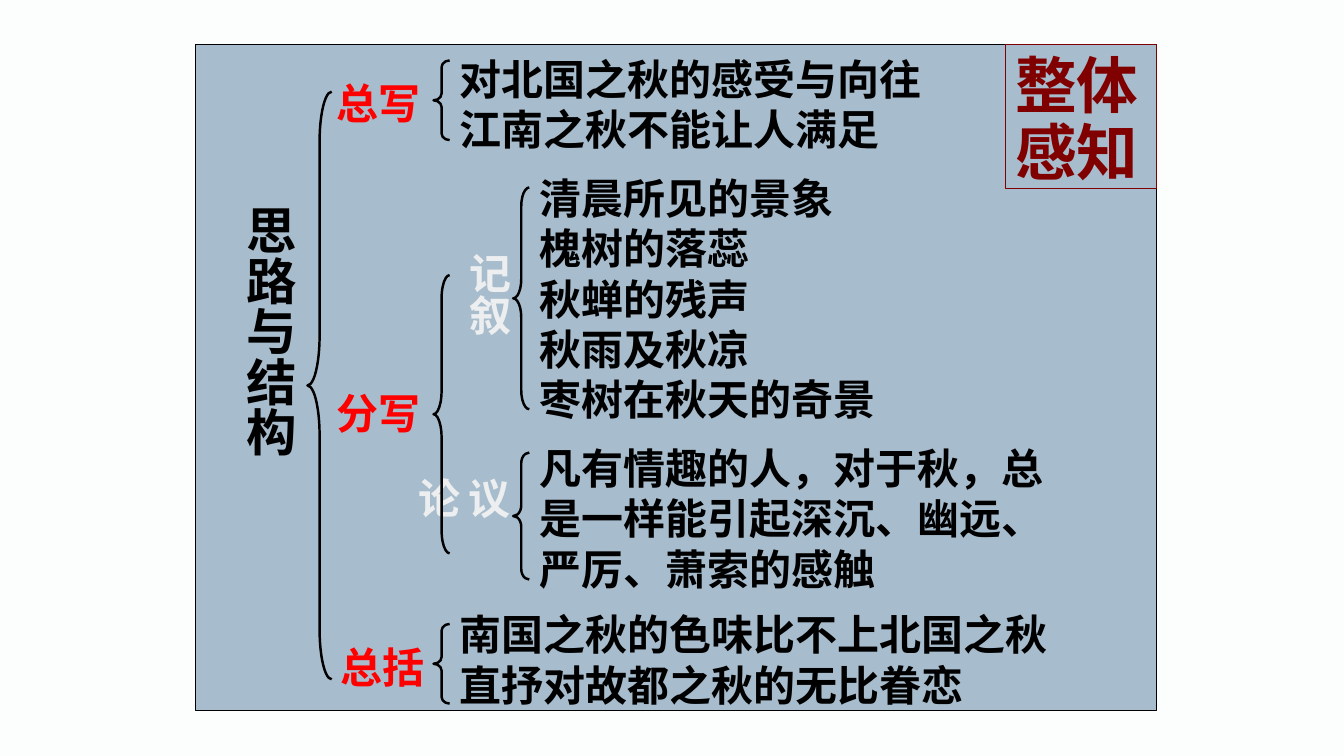
import dataclasses

import pptx
import pptx.dml.color
import pptx.enum.shapes
import pptx.enum.text
import pptx.oxml.ns
import pptx.util
from lxml import etree

Inches = pptx.util.Inches
Pt = pptx.util.Pt
Align = pptx.enum.text.PP_ALIGN


@dataclasses.dataclass(frozen=True)
class Theme:
    background: str = "FCFDFD"
    panel: str = "547D9D"
    ink: str = "000000"
    title: str = "800000"
    accent: str = "FF0000"
    pale: str = "ECEEEF"
    title_size: int = 44
    topic_size: int = 36
    text_size: int = 30
    east_asian: str = "Noto Sans CJK SC"
    sans: str = "Arial"
    serif: str = "Times New Roman"


THEME = Theme()


def colour(value):
    return pptx.dml.color.RGBColor.from_string(value)


def add_child(parent, tag, **attributes):
    return etree.SubElement(parent, pptx.oxml.ns.qn(tag), **attributes)


def place(shape, box):
    shape.left, shape.top, shape.width, shape.height = map(Inches, box)


def write(shape, text, size, ink, font, align=Align.LEFT, leading=36):
    frame = shape.text_frame
    frame.text = text
    frame.word_wrap = True
    frame.auto_size = pptx.enum.text.MSO_AUTO_SIZE.NONE
    frame.vertical_anchor = pptx.enum.text.MSO_ANCHOR.TOP
    frame.margin_left = frame.margin_right = Inches(0.1)
    frame.margin_top, frame.margin_bottom = Inches(0.09), Inches(0.01)
    for para in frame.paragraphs:
        para.alignment = align
        para.line_spacing = Pt(leading)
        para.space_before = para.space_after = Pt(0)
        for span in para.runs:
            span.font.size = Pt(size)
            span.font.bold = True
            span.font.name = font
            span.font.color.rgb = colour(ink)
            add_child(span.font._element, "a:ea", typeface=THEME.east_asian)
    return frame


def draw_panel(page, box):
    panel = page.shapes.add_shape(
        pptx.enum.shapes.MSO_SHAPE.RECTANGLE, *map(Inches, box))
    panel.shadow.inherit = False
    panel.fill.solid()
    panel.fill.fore_color.rgb = colour(THEME.panel)
    tint = panel.fill._xPr.find(".//" + pptx.oxml.ns.qn("a:srgbClr"))
    add_child(tint, "a:alpha", val="50000")
    panel.line.color.rgb = colour(THEME.ink)
    panel.line.width = Pt(0.75)
    page.shapes._spTree.insert(2, panel._element)


def fill_title(page, text, box):
    title = page.shapes.title
    place(title, box)
    title.line.color.rgb = colour(THEME.title)
    title.line.width = Pt(0.75)
    write(title, text, THEME.title_size, THEME.title, THEME.serif, leading=48)


def fill_list(holder, lines, font, box):
    place(holder, box)
    frame = write(holder, "\n".join(lines), THEME.text_size, THEME.ink, font)
    for para in frame.paragraphs:
        properties = para._p.get_or_add_pPr()
        properties.set("marL", "0")
        properties.set("indent", "0")
        add_child(properties, "a:buNone")


def add_label(page, text, box):
    label = page.shapes.add_textbox(*map(Inches, box))
    write(label, text, THEME.text_size, THEME.accent, THEME.sans, Align.CENTER)


def add_vertical_label(page, text, size, ink, box):
    label = page.shapes.add_textbox(*map(Inches, box))
    frame = write(label, text, size, ink, THEME.sans, Align.CENTER, size * 1.2)
    frame.margin_top = frame.margin_bottom = Inches(0.05)
    frame.margin_right = Inches(0.07)
    frame._txBody.bodyPr.set("vert", "eaVert")


def add_brace(page, curl, box):
    brace = page.shapes.add_shape(
        pptx.enum.shapes.MSO_SHAPE.LEFT_BRACE, *map(Inches, box))
    brace.shadow.inherit = False
    brace.fill.background()
    brace.line.color.rgb = colour(THEME.ink)
    brace.line.width = Pt(1.75)
    brace.adjustments[0] = curl
    brace.adjustments[1] = 0.5


def build_outline(page, box):
    left, top, width, height = box

    def inside(across, down, wide, high):
        return left + across, top + down, wide, high

    draw_panel(page, box)
    fill_title(page, "整体感知", inside(width - 1.5, 0, 1.5, 1.43))

    lists = [
        (["对北国之秋的感受与向往", "江南之秋不能让人满足"],
         THEME.east_asian, (2.52, 0, 5.75, 1.11)),
        (["清晨所见的景象", "槐树的落蕊", "秋蝉的残声", "秋雨及秋凉", "枣树在秋天的奇景"],
         THEME.east_asian, (3.31, 1.18, 4.25, 2.62)),
        (["凡有情趣的人，对于秋，总是一样能引起深沉、幽远、严厉、萧索的感触"],
         THEME.sans, (3.31, 3.86, 5.51, 1.61)),
        (["南国之秋的色味比不上北国之秋", "直抒对故都之秋的无比眷恋"],
         THEME.east_asian, (2.52, 5.51, 6.46, 1.11)),
    ]
    holders = [holder for holder in page.placeholders
               if holder.placeholder_format.idx in range(1, 5)]
    for holder, (lines, font, area) in zip(holders, lists):
        fill_list(holder, lines, font, inside(*area))

    for text, area in [("总写", (1.18, 0.24, 1.26, 0.6)),
                       ("分写", (1.18, 3.31, 1.26, 0.6)),
                       ("总括", (1.26, 5.83, 1.18, 0.6))]:
        add_label(page, text, inside(*area))

    for text, size, ink, area in [
            ("思路与结构", THEME.topic_size, THEME.ink, (0.3, 1.5, 0.81, 2.7)),
            ("记叙", THEME.text_size, THEME.pale, (2.53, 1.97, 0.7, 1.04)),
            ("议论", THEME.text_size, THEME.pale, (2.12, 4.2, 1.1, 0.64))]:
        add_vertical_label(page, text, size, ink, inside(*area))

    for curl, area in [(2.06, (1.11, 0.47, 0.24, 5.83)),
                       (0.42, (2.36, 0.16, 0.16, 0.79)),
                       (1.45, (2.36, 2.29, 0.16, 2.76)),
                       (0.42, (2.36, 5.75, 0.16, 0.79)),
                       (1.18, (3.15, 1.42, 0.16, 2.2)),
                       (0.66, (3.15, 4.05, 0.16, 1.26))]:
        add_brace(page, curl, inside(*area))


def main():
    deck = pptx.Presentation()
    deck.slide_width, deck.slide_height = Inches(13.33), Inches(7.5)
    page = deck.slides.add_slide(deck.slide_layouts.get_by_name("Comparison"))
    page.background.fill.solid()
    page.background.fill.fore_color.rgb = colour(THEME.background)
    build_outline(page, (1.94, 0.44, 9.53, 6.61))
    deck.save("out.pptx")


if __name__ == "__main__":
    main()
